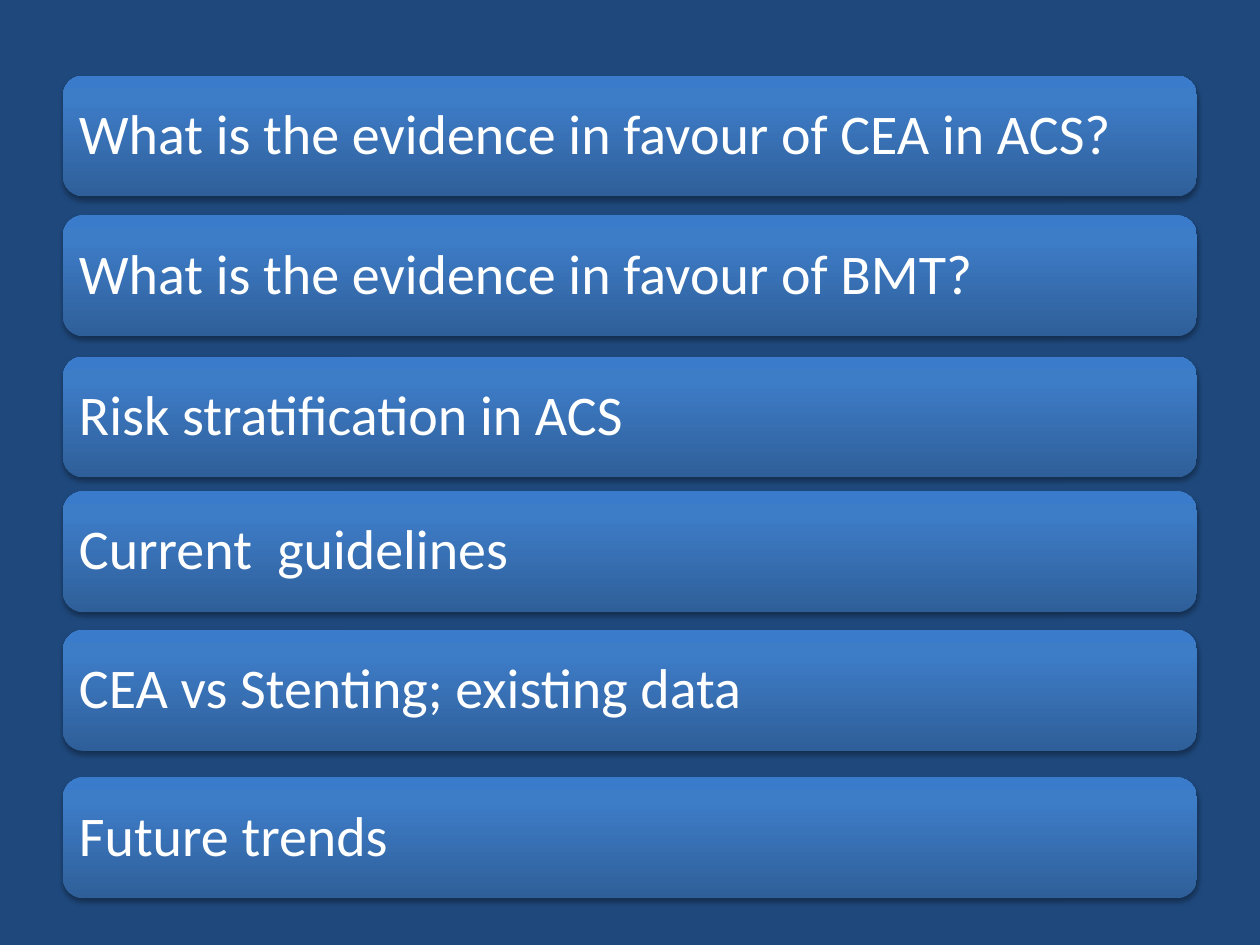
from dataclasses import dataclass

from lxml.etree import SubElement
from pptx import Presentation
from pptx.dml.color import RGBColor
from pptx.enum.shapes import MSO_SHAPE as Preset
from pptx.enum.text import MSO_ANCHOR as Anchor, PP_ALIGN as Align
from pptx.oxml import parse_xml
from pptx.oxml.ns import nsdecls, qn
from pptx.util import Inches, Pt

WIDTH, HEIGHT = Inches(10), Inches(7.5)
LEFT, BAR_WIDTH, BAR_HEIGHT = 5, 90, 12.8
GRADIENT = ((0, "2F5F99"), (80, "3D7CC7"), (100, "3A7CCB"))


@dataclass(frozen=True)
class Topic:
    top: float
    text: str


TOPICS = (
    Topic(8, "What is the evidence in favour of CEA in ACS?"),
    Topic(22.8, "What is the evidence in favour of BMT?"),
    Topic(37.73, "Risk stratification in ACS"),
    Topic(52, "Current  guidelines"),
    Topic(66.67, "CEA vs Stenting; existing data"),
    Topic(82.27, "Future trends"),
)


def color(value: str) -> RGBColor:
    return RGBColor.from_string(value)


def across(percent: float) -> int:
    return round(WIDTH * percent / 100)


def down(percent: float) -> int:
    return round(HEIGHT * percent / 100)


def fill_gradient(box) -> None:
    box.fill.gradient()
    box.fill.gradient_angle = 90
    stops = box._element.spPr.find(qn("a:gradFill")).find(qn("a:gsLst"))
    for stop in list(stops):
        stops.remove(stop)
    for percent, value in GRADIENT:
        stop = SubElement(stops, qn("a:gs"), pos=str(percent * 1000))
        SubElement(stop, qn("a:srgbClr"), val=value)


def add_shadow(box) -> None:
    box._element.spPr.append(parse_xml(
        f'<a:effectLst {nsdecls("a")}>'
        f'<a:outerShdw blurRad="{Pt(3.1)}" dist="{Pt(1.8)}" dir="5400000" rotWithShape="0">'
        '<a:srgbClr val="000000"><a:alpha val="35000"/></a:srgbClr>'
        '</a:outerShdw></a:effectLst>'
    ))


def add_topic(page, topic: Topic) -> None:
    box = page.shapes.add_shape(
        Preset.ROUNDED_RECTANGLE,
        across(LEFT), down(topic.top), across(BAR_WIDTH), down(BAR_HEIGHT),
    )
    box.line.fill.background()
    fill_gradient(box)
    add_shadow(box)
    frame = box.text_frame
    frame.text = topic.text
    frame.word_wrap = True
    frame.vertical_anchor = Anchor.MIDDLE
    frame.margin_left = frame.margin_right = Inches(0.08)
    frame.margin_top = frame.margin_bottom = Inches(0.08)
    para = frame.paragraphs[0]
    para.alignment = Align.LEFT
    para.line_spacing = 0.9
    font = para.runs[0].font
    font.name = "Calibri"
    font.size = Pt(32)
    font.color.rgb = color("FFFFFF")


def main() -> None:
    deck = Presentation()
    deck.slide_width, deck.slide_height = WIDTH, HEIGHT
    page = deck.slides.add_slide(deck.slide_layouts[6])
    page.background.fill.solid()
    page.background.fill.fore_color.rgb = color("1F497D")
    for topic in TOPICS:
        add_topic(page, topic)
    deck.save("out.pptx")


if __name__ == "__main__":
    main()
